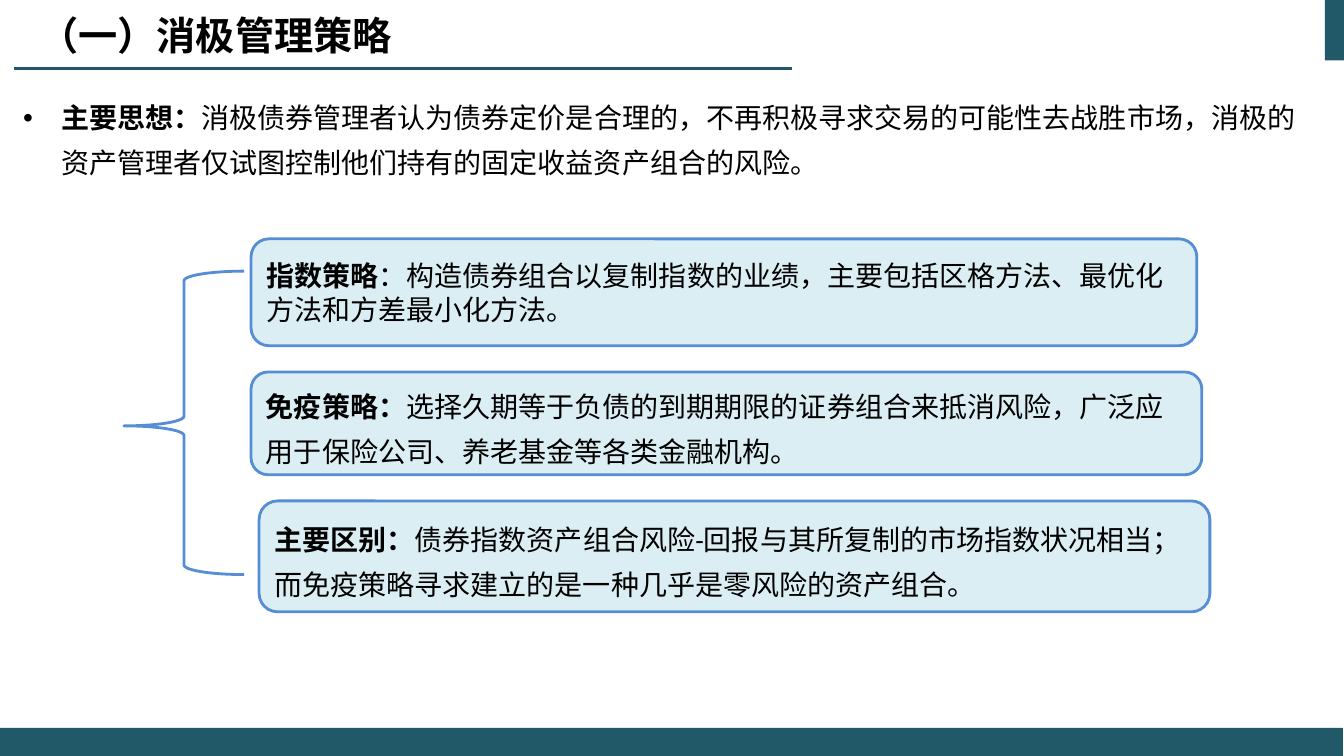
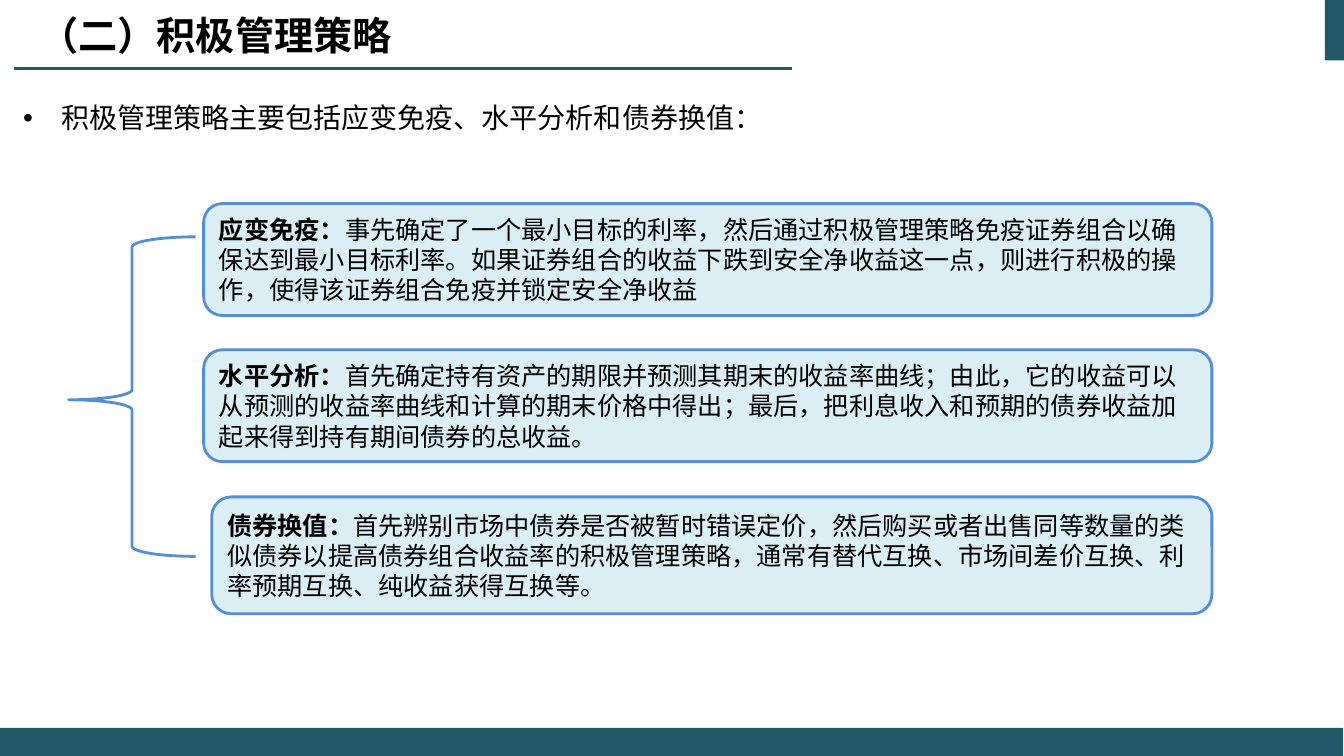
from lxml import etree
from pptx import Presentation
from pptx.dml.color import RGBColor
from pptx.enum import lang, shapes, text
from pptx.oxml import ns
from pptx.util import Inches, Pt

CJK_FONT = "Noto Sans CJK SC"
TEAL, PALE_BLUE, BLUE = "215968", "DBEEF4", "558ED5"


def paint(shape, fill, line=None):
    shape.shadow.inherit = False
    shape.fill.solid()
    shape.fill.fore_color.rgb = RGBColor.from_string(fill)
    if line:
        shape.line.color.rgb = RGBColor.from_string(line)
        shape.line.width = Pt(2)
    else:
        shape.line.fill.background()


def write(shape, runs, size, spacing=None, font="Calibri"):
    paragraph = shape.text_frame.paragraphs[0]
    paragraph.alignment = text.PP_ALIGN.LEFT
    paragraph.space_before = Pt(0)
    if spacing:
        paragraph.line_spacing = Pt(spacing)
    for words, bold in runs:
        run = paragraph.add_run()
        run.text = words
        run.font.name = font
        run.font.size = Pt(size)
        run.font.bold = bold
        run.font.language_id = lang.MSO_LANGUAGE_ID.SIMPLIFIED_CHINESE
        run.font.color.rgb = RGBColor.from_string("000000")
        east_asian = etree.SubElement(run.font.fill._xPr, ns.qn("a:ea"))
        east_asian.set("typeface", CJK_FONT)
        run.font.fill._xPr.find(ns.qn("a:latin")).addnext(east_asian)


SLIDES = [
    {
        "title": "（一）消极管理策略",
        "body": [
            ("主要思想：", True),
            ("消极债券管理者认为债券定价是合理的，不再积极寻求交易的可能性去战胜市场，消极的资产管理者仅试图控制他们持有的固定收益资产组合的风险。", False),
        ],
        "brace": (1.23, 2.69, 1.19, 3.01),
        "size": 20,
        "boxes": [
            ((2.49, 2.37, 9.38, 1.06), None, "指数策略",
             "：构造债券组合以复制指数的业绩，主要包括区格方法、最优化方法和方差最小化方法。"),
            ((2.49, 3.69, 9.43, 1.02), 32, "免疫策略：",
             "选择久期等于负债的到期期限的证券组合来抵消风险，广泛应用于保险公司、养老基金等各类金融机构。"),
            ((2.57, 4.97, 9.43, 1.1), 32, "主要区别：",
             "债券指数资产组合风险-回报与其所复制的市场指数状况相当；而免疫策略寻求建立的是一种几乎是零风险的资产组合。"),
        ],
    },
    {
        "title": "（二）积极管理策略",
        "body": [("积极管理策略主要包括应变免疫、水平分析和债券换值：", False)],
        "brace": (0.68, 2.35, 1.26, 3.17),
        "size": 18,
        "boxes": [
            ((2.02, 2.02, 10, 1.11), None, "应变免疫：",
             "事先确定了一个最小目标的利率，然后通过积极管理策略免疫证券组合以确保达到最小目标利率。如果证券组合的收益下跌到安全净收益这一点，则进行积极的操作，使得该证券组合免疫并锁定安全净收益"),
            ((2.02, 3.47, 10, 1.11), None, "水平分析：",
             "首先确定持有资产的期限并预测其期末的收益率曲线；由此，它的收益可以从预测的收益率曲线和计算的期末价格中得出；最后，把利息收入和预期的债券收益加起来得到持有期间债券的总收益。"),
            ((2.1, 4.93, 9.92, 1.16), None, "债券换值：",
             "首先辨别市场中债券是否被暂时错误定价，然后购买或者出售同等数量的类似债券以提高债券组合收益率的积极管理策略，通常有替代互换、市场间差价互换、利率预期互换、纯收益获得互换等。"),
        ],
    },
]

presentation = Presentation()
presentation.slide_width = Inches(13.33)
presentation.slide_height = Inches(7.5)

layout = presentation.slide_layouts[1]
for placeholder, area in zip(layout.placeholders, [(0.29, 0, 10.88, 0.69), (0.13, 0.84, 12.89, 5.58)]):
    placeholder.left, placeholder.top, placeholder.width, placeholder.height = map(Inches, area)

slides = [presentation.slides.add_slide(layout) for content in SLIDES]

drawing = slides[0].shapes
decorations = []
for area in [(13.14, 0, 0.2, 0.6), (0, 7.22, 13.32, 0.28)]:
    band = drawing.add_shape(shapes.MSO_SHAPE.RECTANGLE, *map(Inches, area))
    paint(band, TEAL)
    decorations.append(band)
rule = drawing.add_connector(shapes.MSO_CONNECTOR.STRAIGHT, *map(Inches, (7.86, 0.68, 0.14, 0.68)))
rule.line.color.rgb = RGBColor.from_string(TEAL)
rule.line.width = Pt(1.5)
etree.SubElement(rule.element.spPr, ns.qn("a:effectLst"))
decorations.append(rule)
for number, decoration in enumerate(decorations, 20):
    decoration.element.xpath(".//p:cNvPr")[0].set("id", str(number))
    layout.element.cSld.spTree.append(decoration.element)

for slide, content in zip(slides, SLIDES):
    title, body = slide.placeholders
    for placeholder in (title, body):
        placeholder.text_frame.auto_size = text.MSO_AUTO_SIZE.NONE
    title.text_frame.vertical_anchor = text.MSO_ANCHOR.MIDDLE
    write(title, [(content["title"], True)], 28, font=CJK_FONT)
    write(body, content["body"], 20, 32)

    group = slide.shapes.add_group_shape()
    brace = group.shapes.add_shape(shapes.MSO_SHAPE.LEFT_BRACE, *map(Inches, content["brace"]))
    brace.adjustments[0] = 0.08
    brace.adjustments[1] = 0.51
    paint(brace, "FFFFFF", BLUE)
    for area, spacing, heading, detail in content["boxes"]:
        box = group.shapes.add_shape(shapes.MSO_SHAPE.ROUNDED_RECTANGLE, *map(Inches, area))
        paint(box, PALE_BLUE, BLUE)
        box.text_frame.word_wrap = True
        box.text_frame.vertical_anchor = text.MSO_ANCHOR.MIDDLE
        write(box, [(heading, True), (detail, False)], content["size"], spacing)

presentation.save("out.pptx")
